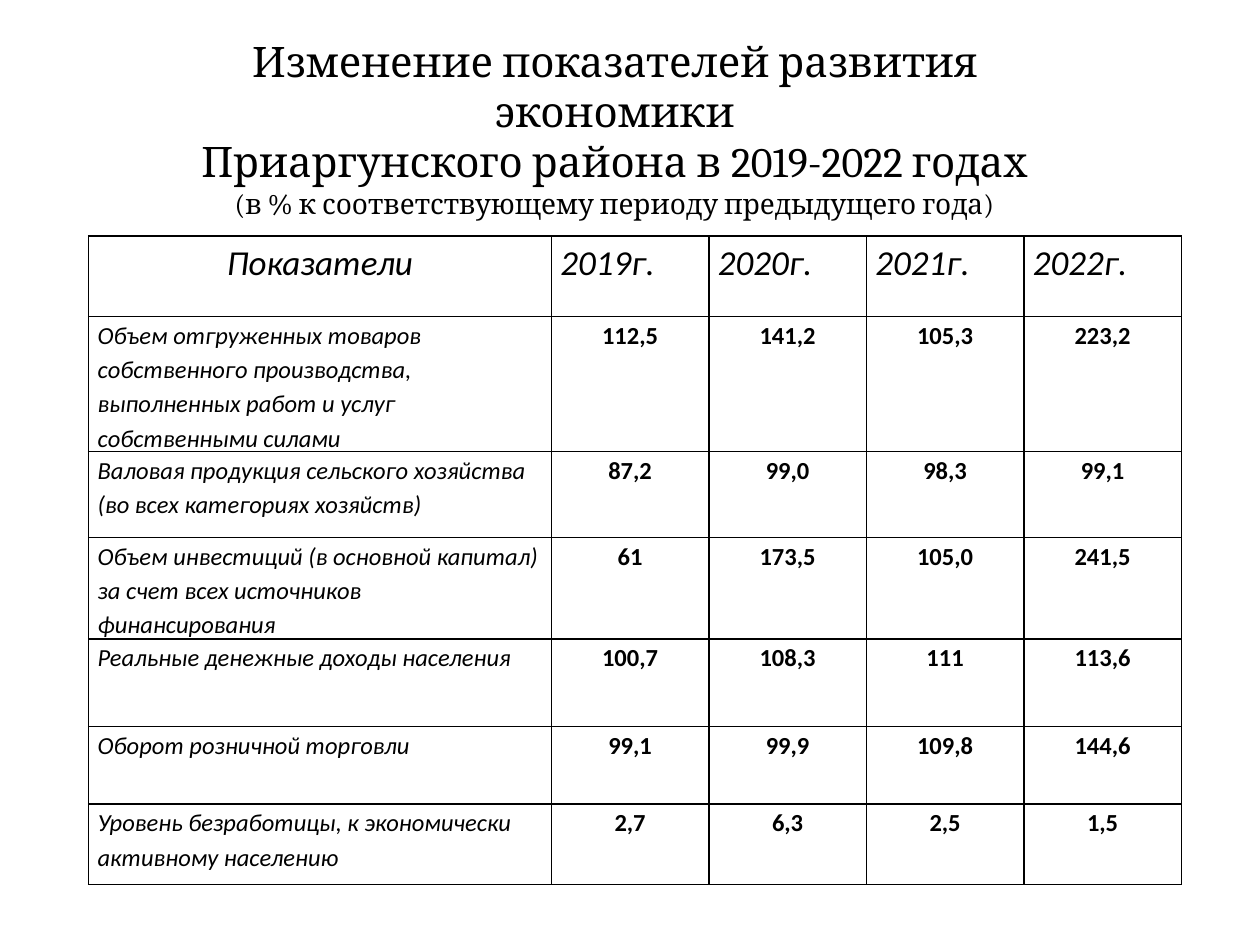
from lxml.etree import SubElement
from pptx import Presentation
from pptx.dml.color import RGBColor
from pptx.enum.text import MSO_AUTO_SIZE, PP_ALIGN
from pptx.oxml.ns import qn
from pptx.util import Pt

COLORS = {"text": "000000", "border": "000000"}


def add_run(p, text, font, size, bold=False, italic=False):
    r = p.add_run()
    r.text = text
    r.font.name = font
    r.font.size = Pt(size)
    r.font.bold = bold
    r.font.italic = italic
    r.font.color.rgb = RGBColor.from_string(COLORS["text"])


def add_borders(cell):
    tc_pr = cell._tc.get_or_add_tcPr()
    for side in ("a:lnL", "a:lnR", "a:lnT", "a:lnB"):
        ln = SubElement(tc_pr, qn(side), w=str(Pt(1)))
        fill = SubElement(ln, qn("a:solidFill"))
        SubElement(fill, qn("a:srgbClr"), val=COLORS["border"])


prs = Presentation()
prs.slide_width, prs.slide_height = Pt(720), Pt(540)
s = prs.slides.add_slide(prs.slide_layouts[6])

# Title
title_lines = [
    ("Изменение показателей развития экономики", 24),
    ("Приаргунского района в 2019-2022 годах", 24),
    ("(в % к соответствующему периоду предыдущего года)", 16),
]
sp = s.shapes.add_textbox(Pt(106.5), Pt(16.5), Pt(489.6), Pt(113.8))
tf = sp.text_frame
tf.word_wrap = True
tf.auto_size = MSO_AUTO_SIZE.SHAPE_TO_FIT_TEXT
for i, (text, size) in enumerate(title_lines):
    p = tf.add_paragraph() if i else tf.paragraphs[0]
    p.alignment = PP_ALIGN.CENTER
    add_run(p, text, "Cambria", size)

# Table data
rows = [
    ("Показатели", "2019г.", "2020г.", "2021г.", "2022г."),
    ("Объем отгруженных товаров собственного производства, "
     "выполненных работ и услуг собственными силами",
     "112,5", "141,2", "105,3", "223,2"),
    ("Валовая продукция сельского хозяйства (во всех категориях хозяйств)",
     "87,2", "99,0", "98,3", "99,1"),
    ("Объем инвестиций (в основной капитал) за счет всех источников финансирования",
     "61", "173,5", "105,0", "241,5"),
    ("Реальные денежные доходы населения", "100,7", "108,3", "111", "113,6"),
    ("Оборот розничной торговли", "99,1", "99,9", "109,8", "144,6"),
    ("Уровень безработицы, к экономически активному населению",
     "2,7", "6,3", "2,5", "1,5"),
]
row_heights = [46, 45.4, 49, 45.4, 50.2, 44.2, 46]
col_widths = [264.5] + [90] * 4

# Table grid
frame = s.shapes.add_table(len(rows), len(col_widths), Pt(50.6), Pt(134.9),
                           Pt(sum(col_widths)), Pt(sum(row_heights)))
table = frame.table
table.first_row = table.horz_banding = False
for col, width in zip(table.columns, col_widths):
    col.width = Pt(width)
for row, height in zip(table.rows, row_heights):
    row.height = Pt(height)

# Table cells: the header and the indicator names are italic, values are bold
for i, values in enumerate(rows):
    for j, text in enumerate(values):
        header, value = i == 0, i > 0 and j > 0
        cell = table.cell(i, j)
        cell.margin_left = cell.margin_right = Pt(5.2)
        cell.margin_top = cell.margin_bottom = Pt(0)
        add_borders(cell)
        cell.fill.background()
        p = cell.text_frame.paragraphs[0]
        centred = value or (header and j == 0)
        p.alignment = PP_ALIGN.CENTER if centred else PP_ALIGN.LEFT
        p.line_spacing = 1.15
        p.space_after = Pt(10)
        add_run(p, text, "Calibri", 20 if header else 14, bold=value, italic=not value)

prs.save("out.pptx")
